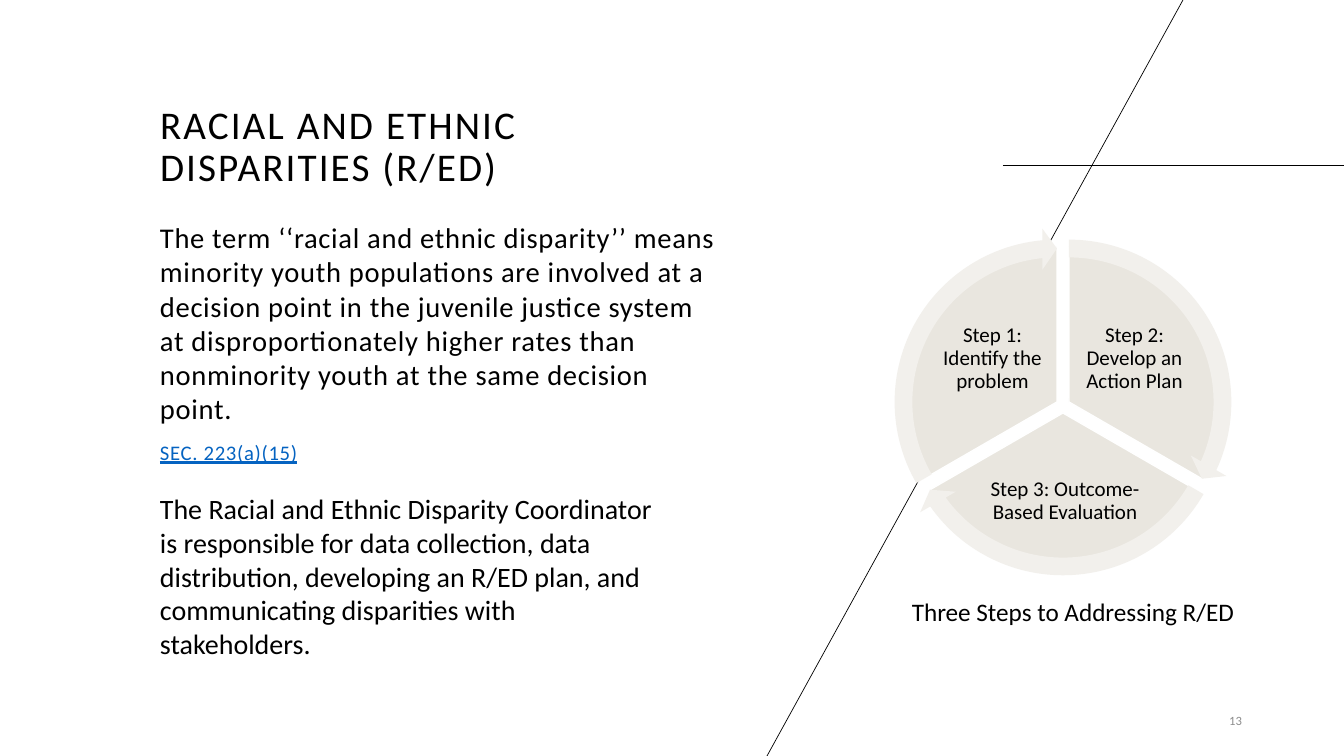
from dataclasses import dataclass

from lxml.etree import SubElement
from pptx import Presentation
from pptx.dml.color import RGBColor
from pptx.enum.shapes import MSO_CONNECTOR, MSO_SHAPE
from pptx.enum.text import MSO_ANCHOR, MSO_AUTO_SIZE, PP_ALIGN
from pptx.oxml.ns import qn
from pptx.util import Emu, Pt


@dataclass(frozen=True)
class Theme:
    font: str = "Calibri"
    ink: str = "000000"
    paper: str = "FFFFFF"
    muted: str = "8C8C8C"
    link: str = "0563C1"
    sector: str = "E9E6DF"
    arrow: str = "F2F0EC"
    title: float = 28
    body: float = 20.4
    duty: float = 20
    caption: float = 18
    step: float = 15
    citation: float = 14.8
    number: float = 9


@dataclass(frozen=True)
class Box:
    x: int
    y: int
    w: int
    h: int


@dataclass(frozen=True)
class Step:
    text: str
    label: Box
    x: int
    y: int
    start: int


THEME = Theme()
PIE_SIZE = 310
ARROW_OUTSET = 19
FULL_TURN = 216
SWEEP = FULL_TURN // 3
ARROW_HEAD = 3.275
STEPS = [
    Step("Step 2: Develop an Action Plan", Box(1079, 312, 111, 93), 914, 247, 162),
    Step("Step 3: Outcome-Based Evaluation", Box(982, 460, 166, 82), 908, 258, 18),
    Step("Step 1: Identify the problem", Box(937, 312, 111, 93), 902, 247, 90),
]


def px(n: int) -> Emu:
    return Emu(round(n * 914400 / 100.8))


def rgb(color: str) -> RGBColor:
    return RGBColor.from_string(color)


def place(sp, box: Box) -> None:
    sp.left, sp.top, sp.width, sp.height = map(px, (box.x, box.y, box.w, box.h))


def write(tf, text: str, *, size: float, color: str = THEME.ink, align=PP_ALIGN.LEFT,
          anchor=MSO_ANCHOR.TOP, spacing: float = 0, leading: float = 1,
          before: float = 0, underline: bool = False, append: bool = False) -> None:
    tf.word_wrap = True
    tf.auto_size = MSO_AUTO_SIZE.NONE
    tf.vertical_anchor = anchor
    p = tf.add_paragraph() if append else tf.paragraphs[0]
    p.alignment = align
    p.line_spacing = leading
    p.space_before = Pt(before)
    r = p.add_run()
    r.text = text
    r.font.name = THEME.font
    r.font.size = Pt(size)
    r.font.bold = False
    r.font.underline = underline
    r.font.color.rgb = rgb(color)
    if spacing:
        r.font._element.set("spc", str(round(spacing * 100)))


def add_text(s, box: Box, text: str, *, inset: int | None = None, **fmt):
    sp = s.shapes.add_textbox(0, 0, 0, 0)
    place(sp, box)
    tf = sp.text_frame
    if inset is not None:
        tf.margin_left = tf.margin_top = tf.margin_right = tf.margin_bottom = px(inset)
    write(tf, text, **fmt)
    return tf


def add_rule(s, x1: int, y1: int, x2: int, y2: int) -> None:
    line = s.shapes.add_connector(MSO_CONNECTOR.STRAIGHT, px(x1), px(y1), px(x2), px(y2))
    line.line.color.rgb = rgb(THEME.ink)
    line.line.width = Pt(0.5)
    SubElement(line._element.spPr, qn("a:effectLst"))


def add_ring_part(s, kind, box: Box, fill: str, adjustments: list[float],
                  outline: str | None = None) -> None:
    sp = s.shapes.add_shape(kind, 0, 0, 0, 0)
    place(sp, box)
    sp.shadow.inherit = False
    sp.fill.solid()
    sp.fill.fore_color.rgb = rgb(fill)
    if outline:
        sp.line.color.rgb = rgb(outline)
        sp.line.width = Pt(1)
    else:
        sp.line.fill.background()
    for i, value in enumerate(adjustments):
        sp.adjustments[i] = value


def add_cycle(s, steps: list[Step]) -> None:
    for step in steps:
        end = (step.start + SWEEP) % FULL_TURN
        add_ring_part(s, MSO_SHAPE.PIE, Box(step.x, step.y, PIE_SIZE, PIE_SIZE),
                      THEME.sector, [step.start, end], THEME.paper)
        add_text(s, step.label, step.text, inset=2, size=THEME.step,
                 align=PP_ALIGN.CENTER, anchor=MSO_ANCHOR.MIDDLE, leading=0.9)
    size = PIE_SIZE + 2 * ARROW_OUTSET
    for step in steps:
        end = (step.start + SWEEP) % FULL_TURN
        box = Box(step.x - ARROW_OUTSET, step.y - ARROW_OUTSET, size, size)
        add_ring_part(s, MSO_SHAPE.CIRCULAR_ARROW, box, THEME.arrow,
                      [0.051, ARROW_HEAD, end - ARROW_HEAD, step.start, 0.059])


def main() -> None:
    prs = Presentation()
    prs.slide_width, prs.slide_height = px(1344), px(756)
    s = prs.slides.add_slide(prs.slide_layouts[5])
    s.background.fill.solid()
    s.background.fill.fore_color.rgb = rgb(THEME.paper)

    add_rule(s, 1003, 165, 1344, 165)
    add_rule(s, 1183, 0, 767, 756)

    title = s.shapes.title
    place(title, Box(150, 62, 563, 133))
    write(title.text_frame, "RACIAL AND ETHNIC DISPARITIES (R/ED)", size=THEME.title,
          anchor=MSO_ANCHOR.BOTTOM, spacing=1.5, leading=0.9)

    definition = add_text(
        s, Box(150, 215, 580, 255),
        "The term ‘‘racial and ethnic disparity’’ means minority youth populations are "
        "involved at a decision point in the juvenile justice system at "
        "disproportionately higher rates than nonminority youth at the same decision point.",
        size=THEME.body, spacing=0.5)
    write(definition, "SEC. 223(a)(15)", size=THEME.citation, color=THEME.link,
          spacing=0.5, before=10, underline=True, append=True)

    add_text(s, Box(887, 591, 372, 40), "Three Steps to Addressing R/ED",
             size=THEME.caption, align=PP_ALIGN.CENTER, anchor=MSO_ANCHOR.MIDDLE)
    add_text(s, Box(950, 701, 302, 40), "13", size=THEME.number, color=THEME.muted,
             align=PP_ALIGN.RIGHT, anchor=MSO_ANCHOR.MIDDLE)
    add_cycle(s, STEPS)
    add_text(
        s, Box(150, 487, 529, 179),
        "The Racial and Ethnic Disparity Coordinator is responsible for data collection, "
        "data distribution, developing an R/ED plan, and communicating disparities with "
        "stakeholders.", size=THEME.duty)

    prs.save("out.pptx")


if __name__ == "__main__":
    main()
